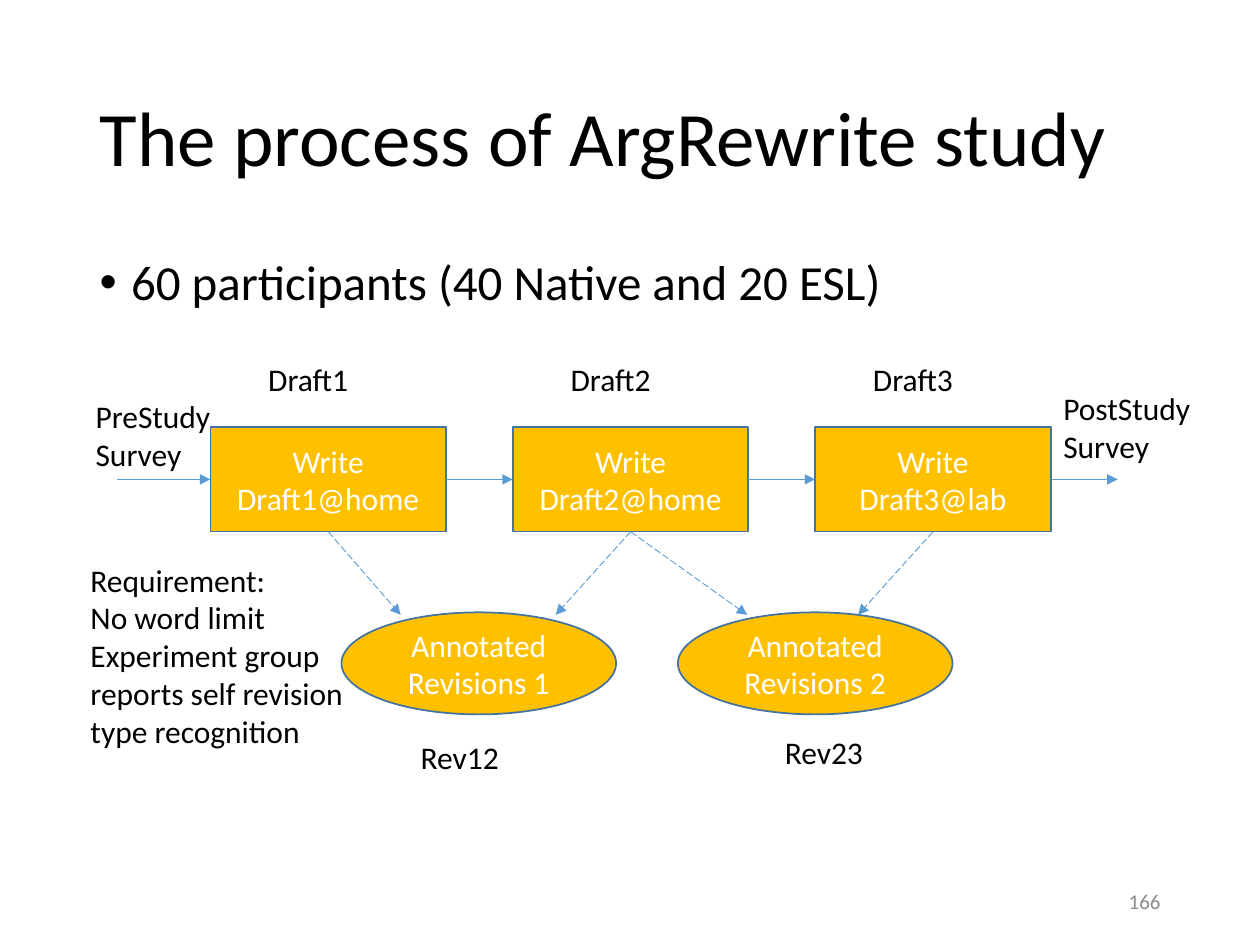
from lxml import etree
from pptx import Presentation
from pptx.dml.color import RGBColor
from pptx.enum.dml import MSO_LINE
from pptx.enum.shapes import MSO_CONNECTOR, MSO_SHAPE
from pptx.enum.text import MSO_ANCHOR, PP_ALIGN
from pptx.oxml.ns import qn
from pptx.util import Inches, Pt

RECT, OVAL = MSO_SHAPE.RECTANGLE, MSO_SHAPE.OVAL
STRAIGHT = MSO_CONNECTOR.STRAIGHT
LONG_DASH = MSO_LINE.LONG_DASH
LEFT, CENTER, RIGHT = PP_ALIGN.LEFT, PP_ALIGN.CENTER, PP_ALIGN.RIGHT
TOP, MIDDLE = MSO_ANCHOR.TOP, MSO_ANCHOR.MIDDLE
SIDE_LEFT, SIDE_BOTTOM, SIDE_RIGHT = 1, 2, 3

COLORS = {
    "text": "000000",
    "on_fill": "FFFFFF",
    "number": "8C8C8C",
    "fill": "FFC000",
    "outline": "43739E",
    "arrow": "5B9BD5",
}


class SlideBuilder:
    font = "Calibri"

    def __init__(self, slide):
        self.s = slide

    def color(self, name):
        return RGBColor.from_string(COLORS[name])

    def set_text(self, sp, text, size, color="text", align=LEFT, anchor=TOP):
        tf = sp.text_frame
        tf.text = text
        tf.word_wrap = True
        tf.vertical_anchor = anchor
        for p in tf.paragraphs:
            p.alignment = align
            for r in p.runs:
                r.font.name = self.font
                r.font.size = Pt(size)
                r.font.color.rgb = self.color(color)
        return tf.paragraphs[0]

    def placeholder(self, sp, box, text, size, anchor=TOP):
        sp.left, sp.top, sp.width, sp.height = map(Inches, box)
        p = self.set_text(sp, text, size, anchor=anchor)
        p.line_spacing = 0.9
        return p

    def title(self, box, text):
        self.placeholder(self.s.shapes.title, box, text, 44, MIDDLE)

    def bullet(self, box, text):
        p = self.placeholder(self.s.placeholders[1], box, text, 28)
        p.space_before = Pt(10)
        pPr = p._p.get_or_add_pPr()
        pPr.set("marL", str(Inches(0.25)))
        pPr.set("indent", str(-Inches(0.25)))

    def label(self, box, text, size=18, **style):
        sp = self.s.shapes.add_textbox(*map(Inches, box))
        self.set_text(sp, text, size, **style)

    def node(self, kind, box, text):
        sp = self.s.shapes.add_shape(kind, *map(Inches, box))
        sp.shadow.inherit = False
        sp.fill.solid()
        sp.fill.fore_color.rgb = self.color("fill")
        sp.line.color.rgb = self.color("outline")
        sp.line.width = Pt(1)
        self.set_text(sp, text, 18, "on_fill", CENTER, MIDDLE)
        return sp

    def arrow(self, start, end, source=None, target=None, dash=None):
        cx = self.s.shapes.add_connector(STRAIGHT, *map(Inches, start + end))
        if source:
            cx.begin_connect(*source)
        if target:
            cx.end_connect(*target)
        cx.line.color.rgb = self.color("arrow")
        cx.line.width = Pt(0.5)
        if dash:
            cx.line.dash_style = dash
        spPr = cx._element.spPr
        etree.SubElement(spPr.find(qn("a:ln")), qn("a:tailEnd"), type="triangle")
        etree.SubElement(spPr, qn("a:effectLst"))


def main():
    prs = Presentation()
    prs.slide_width, prs.slide_height = Inches(10), Inches(7.5)
    b = SlideBuilder(prs.slides.add_slide(prs.slide_layouts[1]))

    b.title((0.69, 0.4, 8.62, 1.45), "The process of ArgRewrite study")
    b.bullet((0.69, 2, 8.62, 4.76), "60 participants (40 Native and 20 ESL)")
    b.label((7.06, 6.95, 2.25, 0.4), "166", 12,
            color="number", align=RIGHT, anchor=MIDDLE)

    box_x, box_y, box_w, box_h, step = 1.67, 3.39, 1.87, 0.83, 2.4
    mid_y, bottom_y = box_y + box_h / 2, box_y + box_h
    drafts = []
    for i, place in enumerate(("home", "home", "lab")):
        x = box_x + i * step
        drafts.append(b.node(RECT, (x, box_y, box_w, box_h),
                             f"Write Draft{i + 1}@{place}"))
        b.label((x + 0.36, 2.81, 1.35, 0.4), f"Draft{i + 1}")

    b.arrow((0.93, mid_y), (box_x, mid_y), target=(drafts[0], SIDE_LEFT))
    for i in range(2):
        x = box_x + i * step
        b.arrow((x + box_w, mid_y), (x + step, mid_y),
                (drafts[i], SIDE_RIGHT), (drafts[i + 1], SIDE_LEFT))
    b.arrow((box_x + 2 * step + box_w, mid_y), (8.87, mid_y),
            (drafts[2], SIDE_RIGHT))
    b.label((0.66, 3.1, 1.35, 0.71), "PreStudy Survey")
    b.label((8.34, 3.04, 1.35, 0.71), "PostStudy Survey")

    for i, x in enumerate((2.71, 5.38)):
        b.node(OVAL, (x, 4.86, 2.18, 0.81), f"Annotated Revisions {i + 1}")
    for i, end_x in ((0, 3.18), (1, 4.41), (1, 5.93), (2, 6.81)):
        start = (box_x + i * step + box_w / 2, bottom_y)
        b.arrow(start, (end_x, 4.88), (drafts[i], SIDE_BOTTOM), dash=LONG_DASH)

    b.label((0.62, 4.4, 2.3, 1.62),
            "Requirement:\nNo word limit\n"
            "Experiment group reports self revision type recognition")
    b.label((3.24, 5.81, 1.65, 0.4), "Rev12")
    b.label((6.13, 5.77, 1.65, 0.4), "Rev23")

    prs.save("out.pptx")


if __name__ == "__main__":
    main()
